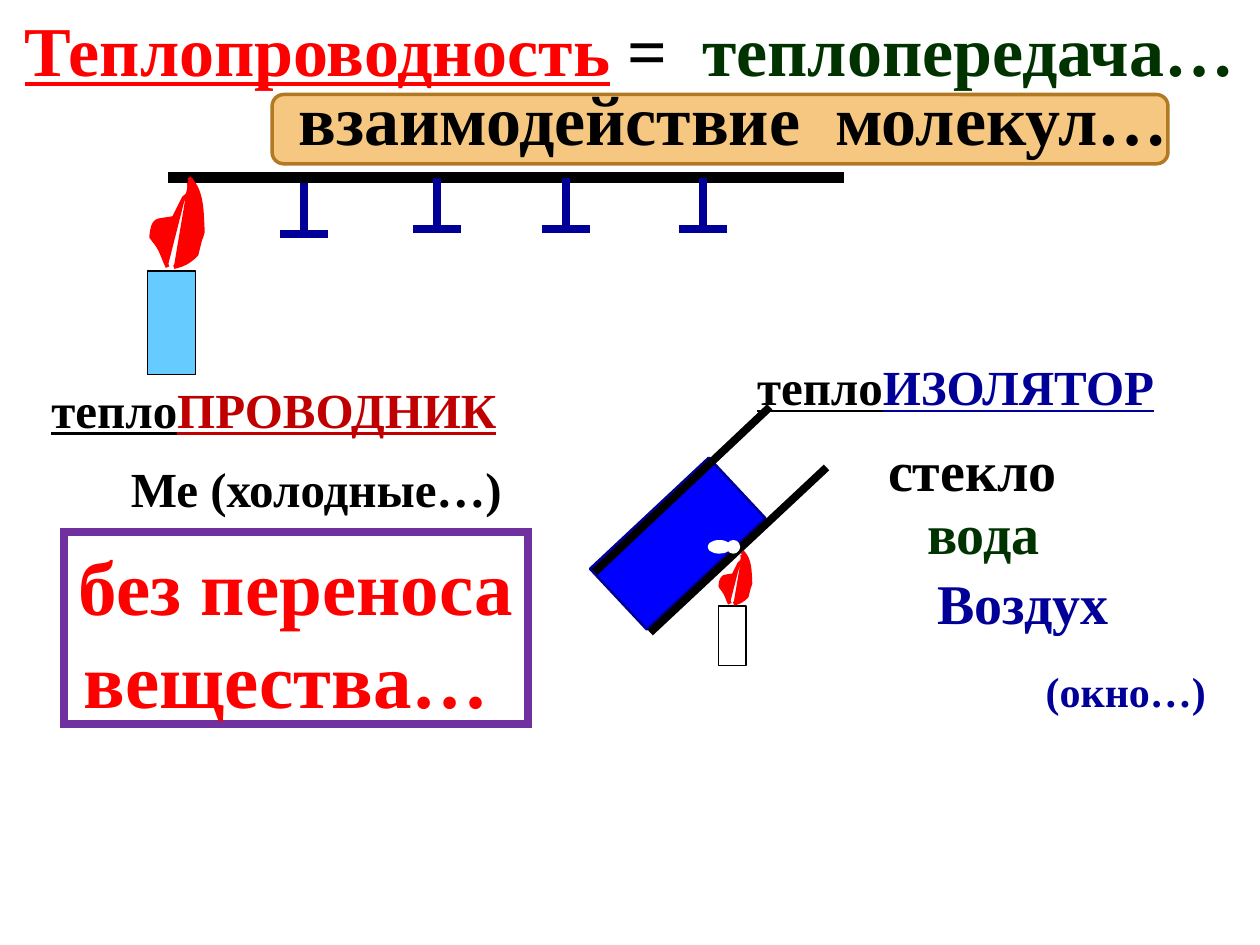
from dataclasses import dataclass

from lxml import etree
from pptx import Presentation
from pptx.dml.color import RGBColor
from pptx.enum.shapes import MSO_CONNECTOR, MSO_SHAPE
from pptx.enum.text import MSO_ANCHOR, MSO_AUTO_SIZE, PP_ALIGN
from pptx.oxml.ns import qn
from pptx.util import Inches, Pt


@dataclass(frozen=True)
class Theme:
    font: str = "Times New Roman"
    # Colours
    black: str = "000000"
    white: str = "FFFFFF"
    red: str = "FF0000"
    dark_red: str = "C00000"
    green: str = "003300"
    navy: str = "000099"
    blue: str = "0000FF"
    sky: str = "66CCFF"
    amber: str = "F0A22E"
    brown: str = "B27822"
    purple: str = "7030A0"
    # Type sizes
    huge: int = 44
    title: int = 40
    large: int = 32
    body: int = 28
    small: int = 24


# Flame halves, measured from the top left of the candle: a start point,
# then curves (two controls and an end point) or lines (an end point)
FLAME = (
    ((0.21, 0.71), (
        ((0.29, 0.69), (0.33, 0.67), (0.39, 0.61)),
        ((0.40, 0.57), (0.41, 0.53), (0.42, 0.49)),
        ((0.43, 0.47), (0.44, 0.43), (0.44, 0.43)),
        ((0.43, 0.27), (0.44, 0.11), (0.33, 0)))),
    ((0.16, 0.71), (
        ((0.14, 0.67), (0.12, 0.61), (0.10, 0.57)),
        ((0.08, 0.53), (0.05, 0.50), (0.03, 0.47)),
        ((0.05, 0.31), (0.07, 0.35), (0.21, 0.32)),
        ((0.29, 0.16),),
        ((0.29, 0.16), (0.29, 0.16), (0.29, 0.16)),
        ((0.30, 0.15), (0.32, 0.14), (0.33, 0.12)),
        ((0.34, 0.09), (0.33, 0.06), (0.33, 0.04)))),
)


class Board:
    def __init__(self, slide, theme):
        self.shapes = slide.shapes
        self.theme = theme

    def paint(self, shape, fill, line, width):
        shape.shadow.inherit = False
        if fill:
            shape.fill.solid()
            shape.fill.fore_color.rgb = RGBColor.from_string(fill)
        else:
            shape.fill.background()
        shape.line.color.rgb = RGBColor.from_string(line)
        shape.line.width = Pt(width)
        return shape

    def shape(self, kind, area, fill, line, width, turn=0):
        item = self.shapes.add_shape(kind, *map(Inches, area))
        item.rotation = turn
        return self.paint(item, fill, line, width)

    def fade(self, shape, percent):
        color = shape._element.spPr.find(qn("a:solidFill"))[0]
        etree.SubElement(color, qn("a:alpha"), val=str(percent * 1000))

    def line(self, start, end, color, width):
        item = self.shapes.add_connector(
            MSO_CONNECTOR.STRAIGHT, *map(Inches, start + end))
        item.line.color.rgb = RGBColor.from_string(color)
        item.line.width = Pt(width)
        etree.SubElement(item._element.spPr, qn("a:effectLst"))

    def curve(self, start, parts, place):
        """Draw an open outline, then bend each three-point part."""
        pen = self.shapes.build_freeform(*place(start))
        pen.add_line_segments(
            [place(dot) for part in parts for dot in part], close=False)
        item = pen.convert_to_shape()
        steps = iter(list(item._element.spPr.iter(qn("a:lnTo"))))
        for part in parts:
            group = [next(steps) for _ in part]
            if len(group) == 3:
                bend = etree.Element(qn("a:cubicBezTo"))
                group[0].addprevious(bend)
                for step in group:
                    bend.append(step[0])
                    step.getparent().remove(step)
        return item

    def style(self, run, size, color, bold=True, under=False):
        font = run.font
        font.name, font.size, font.bold = self.theme.font, Pt(size), bold
        font.color.rgb = RGBColor.from_string(color)
        if under:
            font.underline = True

    def text(self, area, size, *parts, anchor=MSO_ANCHOR.TOP):
        """Each part is (wording, colour) plus optional style settings."""
        frame = self.shapes.add_textbox(*map(Inches, area)).text_frame
        frame.word_wrap = False
        frame.auto_size = MSO_AUTO_SIZE.SHAPE_TO_FIT_TEXT
        frame.vertical_anchor = anchor
        for words, color, *more in parts:
            run = frame.paragraphs[0].add_run()
            run.text = words
            look = {"size": size, "color": color}
            look.update(*more)
            self.style(run, **look)

    def frame(self, area, words, size, color, line, width):
        box = self.shape(MSO_SHAPE.RECTANGLE, area, None, line, width)
        edge = box._element.spPr.find(qn("a:ln"))
        etree.SubElement(edge, qn("a:miter"), lim="800000")
        frame = box.text_frame
        frame.word_wrap = False
        frame.auto_size = MSO_AUTO_SIZE.SHAPE_TO_FIT_TEXT
        frame.vertical_anchor = MSO_ANCHOR.MIDDLE
        frame.margin_bottom = 0
        frame.text = words
        for para in frame.paragraphs:
            para.alignment = PP_ALIGN.CENTER
            self.style(para.runs[0], size, color)

    def candle(self, left, top, scale, fill):
        def place(dot):
            return (Inches(left + dot[0] * scale),
                    Inches(top + dot[1] * scale))

        body = (left, top + 0.74 * scale, 0.38 * scale, 0.82 * scale)
        self.shape(MSO_SHAPE.RECTANGLE, body, fill, self.theme.black, 0.75)
        for start, parts in FLAME:
            self.paint(self.curve(start, parts, place),
                       self.theme.red, self.theme.red, 2.25)

    def nail(self, x, top):
        base = top + 0.41
        self.line((x - 0.19, base), (x + 0.19, base), self.theme.navy, 4.5)
        self.line((x, base), (x, top), self.theme.navy, 4.5)


def main():
    deck = Presentation()
    deck.slide_width, deck.slide_height = Inches(10), Inches(7.5)
    look = Theme()
    board = Board(deck.slides.add_slide(deck.slide_layouts[6]), look)
    under = {"under": True}
    mid = MSO_ANCHOR.MIDDLE

    # Title
    banner = board.shape(MSO_SHAPE.ROUNDED_RECTANGLE, (2.16, 0.75, 7.11, 0.55),
                         look.amber, look.brown, 2)
    board.fade(banner, 60)
    board.text((0.1, 0, 9.9, 0.77), look.title,
               ("Теплопроводность", look.red, under),
               (" =  ", look.black), ("теплопередача…", look.green))

    # Heated rod with nails
    board.nail(2.41, 1.45)
    board.line((1.33, 1.41), (6.7, 1.41), look.black, 6)
    board.candle(1.17, 1.41, 1, look.sky)
    board.text((2.27, 0.55, 7.18, 0.77), look.title,
               ("взаимодействие  молекул…", look.black))

    # Conductor and insulator headings
    board.text((0.31, 2.96, 3.77, 0.57), look.body,
               ("тепло", look.black, under),
               ("ПРОВОДНИК", look.dark_red, under), anchor=mid)
    board.text((0.94, 3.59, 3.25, 0.57), look.body,
               ("Ме (холодные…)", look.black),
               (" ", look.black, {"size": look.small, "bold": False}),
               anchor=mid)
    board.text((5.91, 2.78, 3.39, 0.57), look.body,
               ("тепло", look.black, under),
               ("ИЗОЛЯТОР", look.navy, under), anchor=mid)
    board.text((6.95, 3.4, 1.64, 0.64), look.large,
               ("стекло", look.black),
               (" ", look.black, {"size": look.body, "bold": False}),
               anchor=mid)

    # Test tube over a candle
    board.candle(5.7, 4.38, 0.58, look.white)
    board.shape(MSO_SHAPE.RECTANGLE, (5.05, 3.67, 0.66, 1.29),
                look.blue, look.navy, 1.5, turn=46.9)
    board.line((6.11, 3.23), (4.72, 4.54), look.black, 4.5)
    board.line((6.56, 3.71), (5.16, 5.02), look.black, 4.5)

    # Insulator examples
    for area, size, words, color in (
            ((7.26, 3.91, 1.1, 0.64), look.large, "вода", look.green),
            ((7.34, 4.46, 1.69, 0.64), look.large, "Воздух", look.navy),
            ((8.2, 5.23, 1.49, 0.5), look.small, "(окно…)", look.navy)):
        board.text(area, size, (words, color))

    # Conclusion
    board.frame((0.51, 4.22, 3.68, 1.53), "без переноса\nвещества… ",
                look.huge, look.red, look.purple, 4.5)

    # Other nails and the bubbles in the tube
    for x in (3.47, 4.49, 5.58):
        board.nail(x, 1.41)
    for left, width in ((5.63, 0.16), (5.78, 0.08)):
        board.shape(MSO_SHAPE.OVAL, (left, 4.3, width, 0.08),
                    look.white, look.white, 2)

    deck.save("out.pptx")


if __name__ == "__main__":
    main()
